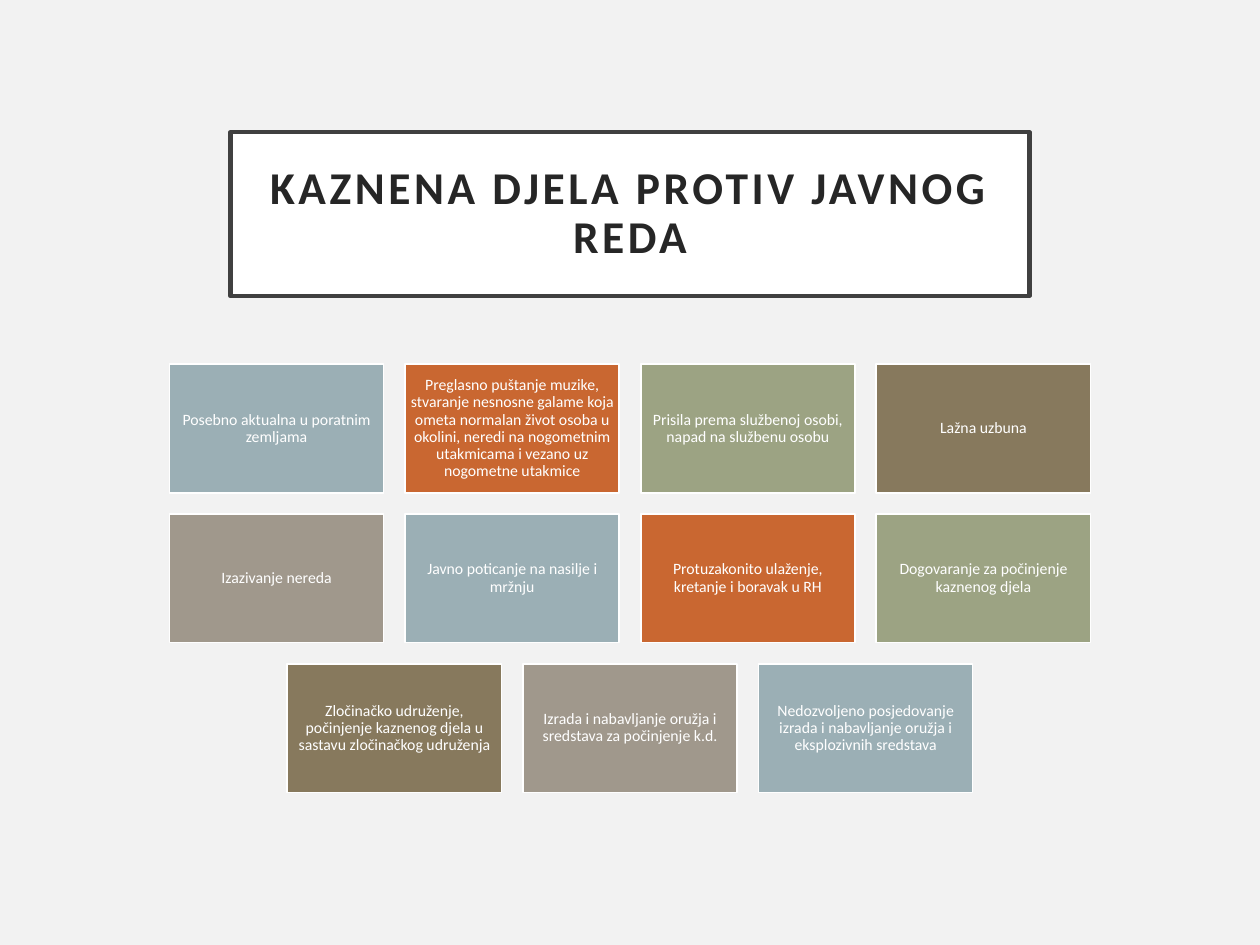
import pptx
import pptx.dml.color
import pptx.enum.shapes
import pptx.enum.text
import pptx.util

Inches = pptx.util.Inches
Pt = pptx.util.Pt

PAGE_WIDTH, PAGE_HEIGHT = 10, 7.5
CARD_WIDTH, CARD_HEIGHT = 1.7, 1.02
CARD_GAP = 0.17
CARDS_TOP = 2.89
CARD_COLORS = ["9BAFB5", "C96731", "9CA383", "87795D", "A0988C"]

TITLE = "KAZNENA DJELA PROTIV JAVNOG REDA"
OFFENCE_ROWS = [
    [
        "Posebno aktualna u poratnim zemljama",
        "Preglasno puštanje muzike, stvaranje nesnosne galame koja ometa "
        "normalan život osoba u okolini, neredi na nogometnim utakmicama "
        "i vezano uz nogometne utakmice",
        "Prisila prema službenoj osobi, napad na službenu osobu",
        "Lažna uzbuna",
    ],
    [
        "Izazivanje nereda",
        "Javno poticanje na nasilje i mržnju",
        "Protuzakonito ulaženje, kretanje i boravak u RH",
        "Dogovaranje za počinjenje kaznenog djela",
    ],
    [
        "Zločinačko udruženje, počinjenje kaznenog djela u sastavu "
        "zločinačkog udruženja",
        "Izrada i nabavljanje oružja i sredstava za počinjenje k.d.",
        "Nedozvoljeno posjedovanje izrada i nabavljanje oružja i "
        "eksplozivnih sredstava",
    ],
]


def paint(color_format, color):
    color_format.rgb = pptx.dml.color.RGBColor.from_string(color)


def add_box(page, left, top, width, height, fill, line, line_width):
    box = page.shapes.add_shape(
        pptx.enum.shapes.MSO_SHAPE.RECTANGLE,
        Inches(left), Inches(top), Inches(width), Inches(height),
    )
    box.shadow.inherit = False
    box.fill.solid()
    paint(box.fill.fore_color, fill)
    paint(box.line.color, line)
    box.line.width = Pt(line_width)
    return box


def write_text(box, text, *, size, color, inset, bold=False, spacing=0):
    frame = box.text_frame
    frame.word_wrap = True
    frame.vertical_anchor = pptx.enum.text.MSO_ANCHOR.MIDDLE
    frame.margin_left = frame.margin_right = Inches(inset)
    frame.margin_top = frame.margin_bottom = Inches(inset)
    para = frame.paragraphs[0]
    para.alignment = pptx.enum.text.PP_ALIGN.CENTER
    para.line_spacing = 0.9
    span = para.add_run()
    span.text = text
    span.font.name = "Calibri"
    span.font.size = Pt(size)
    span.font.bold = bold
    paint(span.font.color, color)
    if spacing:
        span.font._element.set("spc", str(spacing * 100))


def add_title(page):
    box = add_box(page, 1.83, 1.05, 6.34, 1.3, "FFFFFF", "404040", 2.5)
    write_text(box, TITLE, size=26, color="262626", inset=0.2, bold=True, spacing=2)


def add_cards(page):
    number = 0
    for row, offences in enumerate(OFFENCE_ROWS):
        row_width = len(offences) * (CARD_WIDTH + CARD_GAP) - CARD_GAP
        row_left = (PAGE_WIDTH - row_width) / 2
        top = CARDS_TOP + row * (CARD_HEIGHT + CARD_GAP)
        for column, offence in enumerate(offences):
            left = row_left + column * (CARD_WIDTH + CARD_GAP)
            fill = CARD_COLORS[number % len(CARD_COLORS)]
            card = add_box(page, left, top, CARD_WIDTH, CARD_HEIGHT, fill, "FFFFFF", 1)
            write_text(card, offence, size=9, color="FFFFFF", inset=0.04)
            number += 1


def main():
    deck = pptx.Presentation()
    deck.slide_width = Inches(PAGE_WIDTH)
    deck.slide_height = Inches(PAGE_HEIGHT)
    page = deck.slides.add_slide(deck.slide_layouts[6])
    page.background.fill.solid()
    paint(page.background.fill.fore_color, "F2F2F2")
    add_title(page)
    add_cards(page)
    deck.save("out.pptx")


if __name__ == "__main__":
    main()
